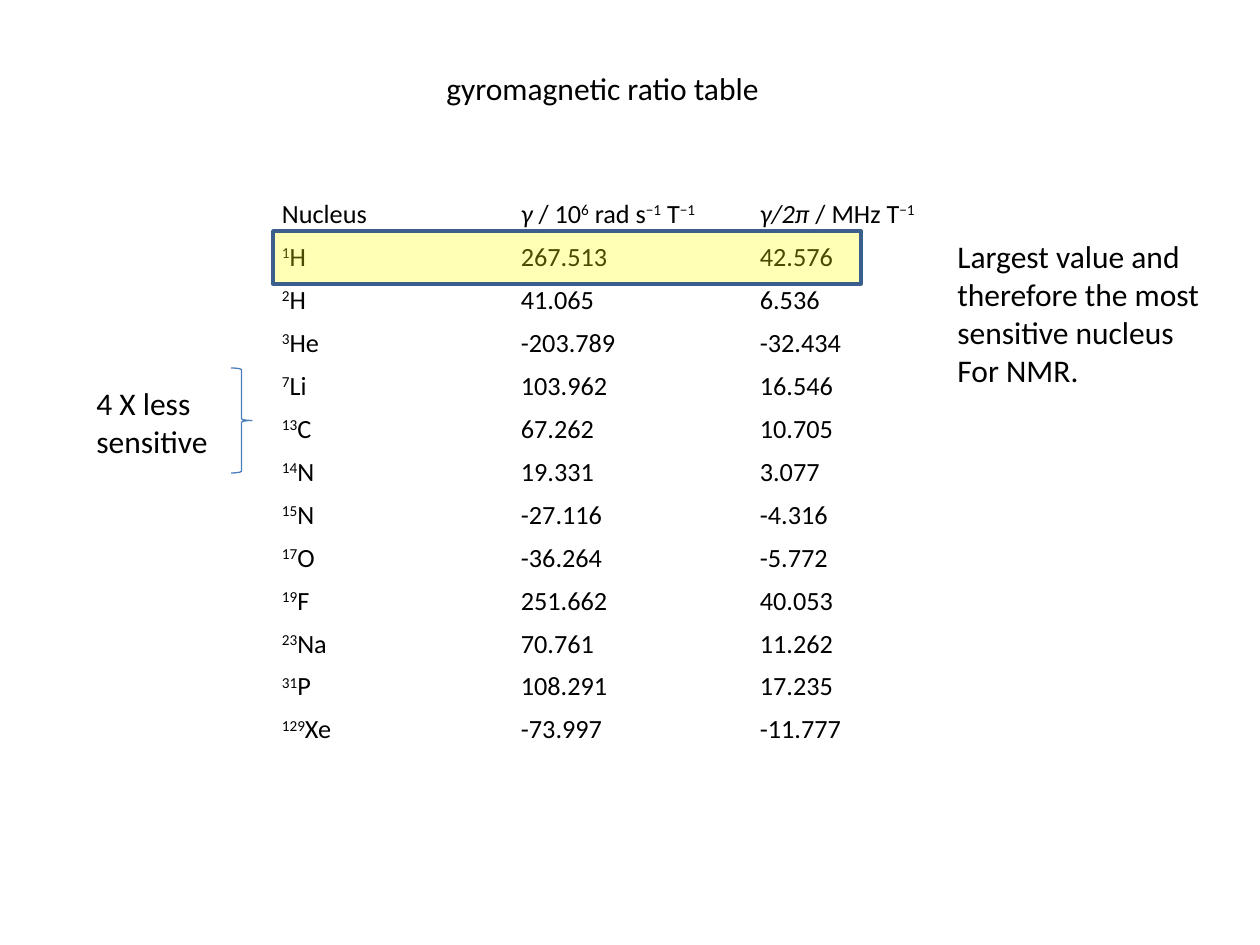
import pptx
import pptx.util
import pptx.dml.color
import pptx.enum.shapes
import pptx.enum.text
import pptx.oxml
import pptx.oxml.ns

PX = 914400 / 126
BLACK = pptx.dml.color.RGBColor(0x00, 0x00, 0x00)
YELLOW = pptx.dml.color.RGBColor(0xFF, 0xFF, 0x00)
NAVY = pptx.dml.color.RGBColor(0x3A, 0x5F, 0x8C)
BLUE = pptx.dml.color.RGBColor(0x4B, 0x7E, 0xBC)
SHAPE = pptx.enum.shapes.MSO_SHAPE
ANCHOR = pptx.enum.text.MSO_ANCHOR


def px(*values):
    return [pptx.util.Emu(round(v * PX)) for v in values]


def add_run(p, text, size, style=""):
    r = p.add_run()
    r.text = text
    r.font.size = pptx.util.Pt(size)
    r.font.name = "Calibri"
    r.font.color.rgb = BLACK
    if style == "italic":
        r.font.italic = True
    if style == "super":
        r.font._element.set("baseline", "30000")


prs = pptx.Presentation()
prs.slide_width, prs.slide_height = px(1260, 945)
s = prs.slides.add_slide(prs.slide_layouts[5])

header = [
    [("Nucleus", "")],
    [("γ", "italic"), (" / 10", ""), ("6", "super"), (" rad s", ""),
     ("−1", "super"), (" T", ""), ("−1", "super")],
    [("γ/2π", "italic"), (" / MHz T", ""), ("−1", "super")],
]
nuclei = [
    ("1", "H", "267.513", "42.576"),
    ("2", "H", "41.065", "6.536"),
    ("3", "He", "-203.789", "-32.434"),
    ("7", "Li", "103.962", "16.546"),
    ("13", "C", "67.262", "10.705"),
    ("14", "N", "19.331", "3.077"),
    ("15", "N", "-27.116", "-4.316"),
    ("17", "O", "-36.264", "-5.772"),
    ("19", "F", "251.662", "40.053"),
    ("23", "Na", "70.761", "11.262"),
    ("31", "P", "108.291", "17.235"),
    ("129", "Xe", "-73.997", "-11.777"),
]
rows = [header]
for mass, symbol, gamma, frequency in nuclei:
    rows.append([[(mass, "super"), (symbol, "")], [(gamma, "")], [(frequency, "")]])

tbl = s.shapes.add_table(len(rows), 3, *px(271, 193, 3 * 239, len(rows) * 43)).table
tbl.first_row = False
tbl.horz_banding = False
for i, row in enumerate(rows):
    for j, runs in enumerate(row):
        cell = tbl.cell(i, j)
        cell.fill.background()
        cell.vertical_anchor = ANCHOR.MIDDLE
        cell.margin_left, cell.margin_right, cell.margin_top, cell.margin_bottom = px(11, 11, 5, 5)
        for text, style in runs:
            add_run(cell.text_frame.paragraphs[0], text, 15, style)

title = s.shapes.title
title.left, title.top, title.width, title.height = px(284, 63, 630, 51)
tf = title.text_frame
tf.word_wrap = True
tf.auto_size = pptx.enum.text.MSO_AUTO_SIZE.NONE
tf.vertical_anchor = ANCHOR.TOP
tf.paragraphs[0].alignment = pptx.enum.text.PP_ALIGN.CENTER
add_run(tf.paragraphs[0], " gyromagnetic ratio table", 18)

highlight = s.shapes.add_shape(SHAPE.RECTANGLE, *px(273, 231, 588, 53))
highlight.shadow.inherit = False
highlight.fill.solid()
highlight.fill.fore_color.rgb = YELLOW
alpha = pptx.oxml.parse_xml(
    '<a:alpha xmlns:a="http://schemas.openxmlformats.org/drawingml/2006/main" val="29000"/>')
highlight._element.spPr.find(".//" + pptx.oxml.ns.qn("a:srgbClr")).append(alpha)
highlight.line.color.rgb = NAVY
highlight.line.width = pptx.util.Pt(2)

notes = [
    ((945, 231, 270, 165),
     ["Largest value and", "therefore the most", "sensitive nucleus", "For NMR."]),
    ((84, 378, 139, 89), ["4 X less", "sensitive"]),
]
for box, lines in notes:
    tf = s.shapes.add_textbox(*px(*box)).text_frame
    tf.word_wrap = False
    for i, line in enumerate(lines):
        p = tf.add_paragraph() if i else tf.paragraphs[0]
        add_run(p, line, 18)

brace = s.shapes.add_shape(SHAPE.RIGHT_BRACE, *px(231, 368, 21, 105))
brace.shadow.inherit = False
brace.fill.background()
brace.line.color.rgb = BLUE
brace.line.width = pptx.util.Pt(0.75)

prs.save("out.pptx")
